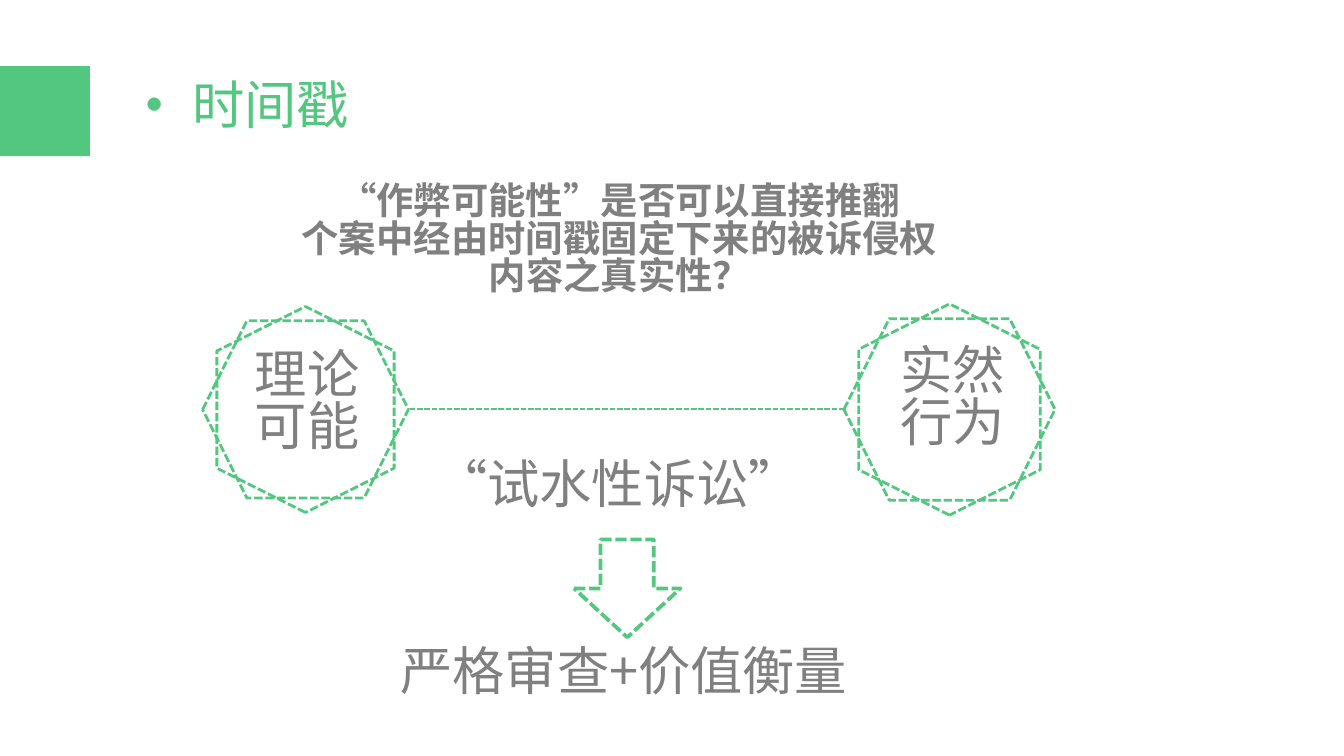
"""Builds the slide on timestamps: theoretical possibility against actual conduct."""
import pptx
import pptx.dml.color
import pptx.enum.dml
import pptx.enum.lang
import pptx.enum.shapes
import pptx.enum.text
import pptx.oxml
import pptx.oxml.ns
import pptx.util

Cm = pptx.util.Cm
Pt = pptx.util.Pt
Shapes = pptx.enum.shapes.MSO_SHAPE
Align = pptx.enum.text.PP_ALIGN
DASH = pptx.enum.dml.MSO_LINE.SQUARE_DOT
GREEN = "53C780"
GREY = "808080"
FONT = "Noto Sans CJK SC"


def color(hex_string):
    return pptx.dml.color.RGBColor.from_string(hex_string)


def add_text(lines, left, top, width, height, size=28, fill=GREY, bold=False,
             align=Align.LEFT, wrap=True):
    text_box = slide.shapes.add_textbox(Cm(left), Cm(top), Cm(width), Cm(height))
    frame = text_box.text_frame
    frame.word_wrap = wrap
    frame.margin_top = Cm(0.17)
    for index, runs in enumerate(lines):
        paragraph = frame.paragraphs[0] if index == 0 else frame.add_paragraph()
        paragraph.alignment = align
        paragraph.line_spacing = 0.83
        for text, run_bold in runs if isinstance(runs, list) else [(runs, bold)]:
            run = paragraph.add_run()
            run.text = text
            run.font.name = FONT
            run.font.size = Pt(size)
            run.font.bold = run_bold
            run.font.color.rgb = color(fill)
            run.font.language_id = pptx.enum.lang.MSO_LANGUAGE_ID.SIMPLIFIED_CHINESE
            east_asian = pptx.oxml.parse_xml(
                f'<a:ea {pptx.oxml.ns.nsdecls("a")} typeface="{FONT}"/>')
            run.font._element.find(pptx.oxml.ns.qn("a:latin")).addnext(east_asian)


presentation = pptx.Presentation()
presentation.slide_width = Cm(25.4)
presentation.slide_height = Cm(14.28)
slide = presentation.slides.add_slide(presentation.slide_layouts[6])

title_block = slide.shapes.add_shape(Shapes.RECTANGLE, Cm(0), Cm(1.25), Cm(1.7), Cm(1.7))
title_block.shadow.inherit = False
title_block.fill.solid()
title_block.fill.fore_color.rgb = color(GREEN)
title_block.line.fill.background()

outlines = [
    (Shapes.HEXAGON, 3.83, 6.06, 3.89, 3.35, 0, 1.5),
    (Shapes.HEXAGON, 3.83, 6.06, 3.89, 3.35, 270, 1.5),
    (Shapes.HEXAGON, 15.95, 6.02, 3.99, 3.43, 0, 1.5),
    (Shapes.HEXAGON, 15.95, 6.02, 3.99, 3.43, 270, 1.5),
    (Shapes.DOWN_ARROW, 10.85, 10.19, 2.01, 1.85, 0, 2),
]
for kind, left, top, width, height, rotation, weight in outlines:
    shape = slide.shapes.add_shape(kind, Cm(left), Cm(top), Cm(width), Cm(height))
    shape.rotation = rotation
    shape.shadow.inherit = False
    shape.fill.background()
    shape.line.color.rgb = color(GREEN)
    shape.line.width = Pt(weight)
    shape.line.dash_style = DASH

connector = slide.shapes.add_connector(
    pptx.enum.shapes.MSO_CONNECTOR.STRAIGHT, Cm(7.74), Cm(7.73), Cm(15.95), Cm(7.73))
connector.line.color.rgb = color(GREEN)
connector.line.width = Pt(1)
connector.line.dash_style = DASH
connector._element.spPr.append(
    pptx.oxml.parse_xml(f'<a:effectLst {pptx.oxml.ns.nsdecls("a")}/>'))

add_text([[("· ", True), ("时间戳", False)]], 2.18, 1.4, 14.68, 1.45, fill=GREEN)
add_text(["“作弊可能性”是否可以直接推翻", "个案中经由时间戳固定下来的被诉侵权", "内容之真实性？"],
         2.92, 3.33, 17.58, 2.82, size=20, bold=True, align=Align.CENTER)
add_text(["理论", "可能"], 4.57, 6.48, 5.03, 2.64)
add_text(["实然", "行为"], 16.76, 6.4, 5.03, 2.64)
add_text(["“试水性诉讼”"], 7.98, 8.56, 7.49, 1.45, wrap=False)
add_text(["严格审查+价值衡量"], 7.32, 12.09, 10.8, 1.45)

presentation.save("out.pptx")
